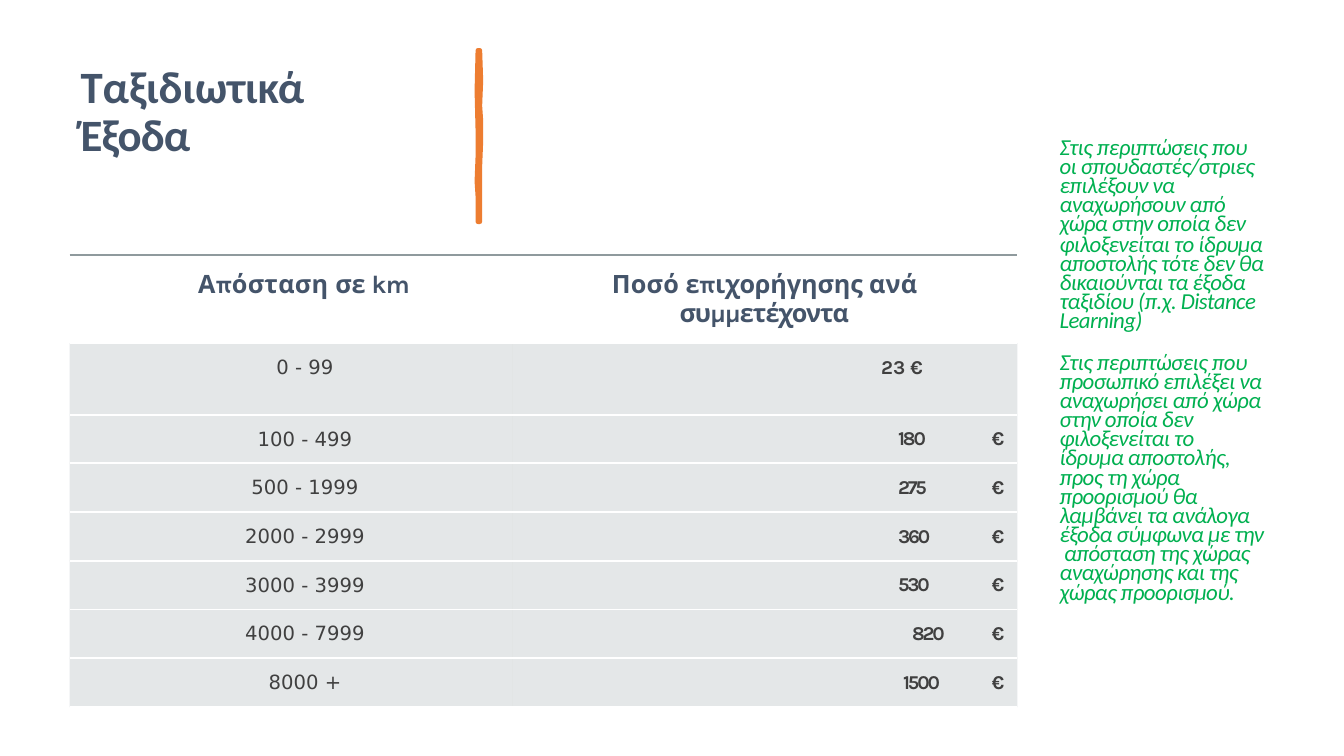
from lxml.etree import SubElement
from pptx import Presentation
from pptx.dml.color import RGBColor
from pptx.enum.text import MSO_ANCHOR, PP_ALIGN
from pptx.oxml import parse_xml
from pptx.oxml.ns import nsdecls, qn
from pptx.util import Inches, Pt

COLORS = {"navy": "44546A", "orange": "ED7D31", "green": "00B050",
          "gray": "404040", "band": "B4BCBE", "rule": "8F9A9D", "white": "FFFFFF"}
NO_GRID_STYLE = "{2D5ABB26-0587-4C30-8999-92F81FD0307C}"

TITLE = [("Ταξιδιωτικά ", 0), ("Έξοδα", -0.6)]
HEADINGS = ([("Απόσταση ", 0.2), ("σε ", -0.2), ("km", -0.4)],
            [("Ποσό ", 0.1), ("επιχορήγησης ", -0.1), ("ανά ", 0.2), ("συμμετέχοντα", -0.7)])
AMOUNT = {"align": PP_ALIGN.RIGHT, "left": 1.85, "tab": 2.48, "tracking": -1.5}
GRANTS = [
    ("0 - 99", "23 €", {"left": 3.41}),
    ("100 - 499", "180\t€", AMOUNT),
    ("500 - 1999", "275\t€", AMOUNT),
    ("2000 - 2999", "360\t€", AMOUNT),
    ("3000 - 3999", "530\t€", AMOUNT),
    ("4000 - 7999", "820\t€", {**AMOUNT, "left": 0.16, "tab": 0.79}),
    ("8000 +", "1500\t€", {**AMOUNT, "left": 0.16, "tab": 0.88}),
]
NOTES = [
    ("Στις περιπτώσεις που οι σπουδαστές/στριες επιλέξουν να αναχωρήσουν από "
     "χώρα στην οποία δεν", 0.9),
    ("φιλοξενείται το ίδρυμα αποστολής τότε δεν θα δικαιούνται τα έξοδα ταξιδίου "
     "(π.χ. Distance Learning)", 0.9),
    ("Στις περιπτώσεις που προσωπικό επιλέξει να αναχωρήσει από χώρα στην οποία δεν "
     "φιλοξενείται το  ίδρυμα αποστολής, προς τη χώρα προορισμού θα λαμβάνει τα ανάλογα "
     "έξοδα σύμφωνα με την  απόσταση της χώρας αναχώρησης και της χώρας προορισμού.", 15.7),
]
BAR_OUTLINE = [(474, 50), (476, 50), (477, 80), (476, 105), (477, 120), (477, 140),
               (476, 165), (476, 220), (474, 220), (474, 195), (473, 180),
               (474, 155), (474, 130), (473, 90)]


def rgb(name):
    return RGBColor.from_string(COLORS[name])


def write(para, text, font="Calibri", size=14, color="gray", bold=False, italic=False,
          tracking=0, align=PP_ALIGN.LEFT, left=0, first=0, line=None, before=0, tab=None):
    para.alignment = align
    para.space_before = Pt(before)
    if line:
        para.line_spacing = line
    properties = para._p.get_or_add_pPr()
    properties.set("marL", str(Inches(left)))
    if first:
        properties.set("indent", str(Inches(first)))
    if tab:
        stops = SubElement(properties, qn("a:tabLst"))
        SubElement(stops, qn("a:tab"), pos=str(Inches(tab)), algn="l")
    spans = [(text, tracking)] if isinstance(text, str) else text
    for words, spacing in spans:
        span = para.add_run()
        span.text = words
        span.font.name = font
        span.font.size = Pt(size)
        span.font.bold = bold
        span.font.italic = italic
        span.font.color.rgb = rgb(color)
        span._r.get_or_add_rPr().set("spc", str(round(spacing * 100)))


class Page:
    def __init__(self, deck):
        self.shapes = deck.slides.add_slide(deck.slide_layouts[6]).shapes

    def text(self, place, paragraphs, **style):
        box = self.shapes.add_textbox(*map(Inches, place))
        frame = box.text_frame
        frame.word_wrap = True
        frame.vertical_anchor = MSO_ANCHOR.MIDDLE
        for index, (text, before) in enumerate(paragraphs):
            para = frame.add_paragraph() if index else frame.paragraphs[0]
            write(para, text, before=before, **style)

    def brush_bar(self, points, color):
        builder = self.shapes.build_freeform(*points[0], scale=Inches(0.01))
        builder.add_line_segments(points[1:])
        bar = builder.convert_to_shape()
        bar.shadow.inherit = False
        bar.fill.solid()
        bar.fill.fore_color.rgb = rgb(color)
        bar.line.color.rgb = rgb(color)
        bar.line.width = Pt(3.25)
        SubElement(bar.line._get_or_add_ln(), qn("a:round"))

    def table(self, place, widths, heights):
        grid = self.shapes.add_table(len(heights), len(widths), *map(Inches, place)).table
        grid.first_row = grid.horz_banding = False
        grid._tbl.tblPr.find(qn("a:tableStyleId")).text = NO_GRID_STYLE
        for column, width in zip(grid.columns, widths):
            column.width = Inches(width)
        for row, height in zip(grid.rows, heights):
            row.height = Inches(height)
        return grid

    def cell(self, cell, text, inset, fill=None, edges=(), **style):
        cell.margin_left = Inches(0.25)
        cell.margin_top = cell.margin_right = Inches(inset)
        cell.margin_bottom = Inches(inset - 0.01)
        if fill:
            cell.fill.solid()
            cell.fill.fore_color.rgb = rgb(fill)
            tint = cell._tc.tcPr.find(qn("a:solidFill"))[0]
            SubElement(tint, qn("a:alpha"), val="35000")
        else:
            cell.fill.background()
        for index, (side, color, opacity) in enumerate(edges):
            cell._tc.tcPr.insert(index, parse_xml(
                f'<a:{side} {nsdecls("a")} w="{Pt(1.5)}"><a:solidFill>'
                f'<a:srgbClr val="{COLORS[color]}"><a:alpha val="{opacity * 1000}"/></a:srgbClr>'
                f'</a:solidFill><a:prstDash val="solid"/></a:{side}>'))
        write(cell.text_frame.paragraphs[0], text, **style)


def main():
    deck = Presentation()
    deck.slide_width, deck.slide_height = Inches(13.33), Inches(7.5)
    page = Page(deck)
    page.text((0.69, 0.55, 3.31, 1.14), [(TITLE, 0)], size=32, color="navy",
              bold=True, left=0.01, line=0.9)
    page.brush_bar(BAR_OUTLINE, "orange")
    page.text((10.27, 0.63, 2.37, 6.12), NOTES, size=16.3, color="green",
              italic=True, tracking=-0.4, left=0.14, line=0.7)

    heights = [0.87, 0.71] + [0.48] * 6
    grid = page.table((0.69, 2.53, 9.4, sum(heights)), (4.39, 5.01), heights)
    heading = {"inset": 0.15, "edges": [("lnT", "rule", 60)], "font": "Karla",
               "size": 18, "color": "navy", "bold": True}
    page.cell(grid.cell(0, 0), HEADINGS[0], align=PP_ALIGN.CENTER, left=0.16,
              before=3.2, **heading)
    page.cell(grid.cell(0, 1), HEADINGS[1], left=1.41, first=-0.67, line=Pt(21),
              before=4.5, **heading)
    body = {"inset": 0.13, "fill": "band",
            "edges": [("lnT", "white", 100), ("lnB", "white", 100)]}
    for row, (distance, amount, layout) in enumerate(GRANTS, 1):
        page.cell(grid.cell(row, 0), distance, font="DejaVu Sans",
                  align=PP_ALIGN.CENTER, left=0.16, before=3.2, **body)
        page.cell(grid.cell(row, 1), amount, font="Karla", bold=True,
                  before=2.6, **layout, **body)
    deck.save("out.pptx")


if __name__ == "__main__":
    main()
